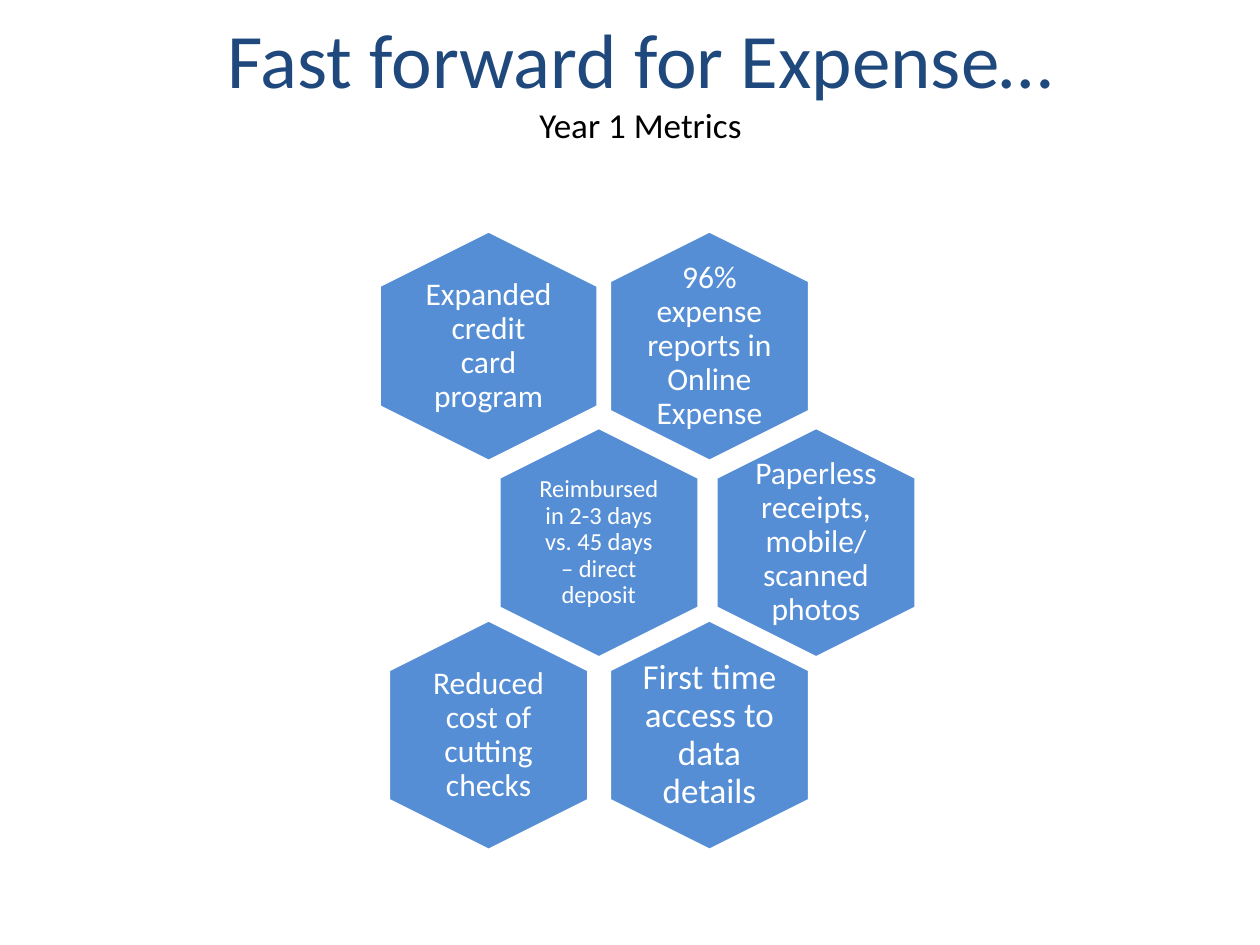
"""Build the expense metrics slide with its honeycomb of hexagons."""
import pptx
import pptx.dml.color
import pptx.enum.shapes
import pptx.enum.text
import pptx.util

Pt = pptx.util.Pt
NAVY = pptx.dml.color.RGBColor(0x1F, 0x49, 0x7D)
BLUE = pptx.dml.color.RGBColor(0x55, 0x8E, 0xD5)
WHITE = pptx.dml.color.RGBColor(0xFF, 0xFF, 0xFF)
BLACK = pptx.dml.color.RGBColor(0x00, 0x00, 0x00)
CENTER = pptx.enum.text.PP_ALIGN.CENTER
MIDDLE = pptx.enum.text.MSO_ANCHOR.MIDDLE
NO_FIT = pptx.enum.text.MSO_AUTO_SIZE.NONE


def format_run(r, size, color):
    r.font.name = "Calibri"
    r.font.size = Pt(size)
    r.font.color.rgb = color


prs = pptx.Presentation()
prs.slide_width, prs.slide_height = Pt(720), Pt(540)
s = prs.slides.add_slide(prs.slide_layouts[5])

title = s.shapes.title
title.left, title.top, title.width, title.height = Pt(42), Pt(0), Pt(648), Pt(90)
tf = title.text_frame
tf.auto_size = NO_FIT
tf.vertical_anchor = MIDDLE
p = tf.paragraphs[0]
p.text = "Fast forward for Expense…\vYear 1 Metrics"
p.alignment = CENTER
format_run(p.runs[0], 44, NAVY)
format_run(p.runs[1], 20, BLACK)

HEX_LENGTH = 131.8
TEXT_HEIGHT = 90.5
ROWS = [197.8, 310.1, 420.1]
cells = [
    (279.2, 0, 125.3, 84.2, 5, 18, "Expanded credit card program"),
    (405.4, 0, 114.5, 79.2, 0, 18, "96% expense reports in Online Expense"),
    (342.2, 1, 114.5, 79.2, 4.3, 14, "Reimbursed in 2-3 days vs. 45 days – direct deposit"),
    (466.3, 1, 114.5, 79.2, 0, 18, "Paperless receipts, mobile/ scanned photos"),
    (279.2, 2, 114.5, 79.2, 5, 18, "Reduced cost of cutting checks"),
    (405.4, 2, 114.5, 79.2, 0, 20, "First time access to data details"),
]

for x, row, hex_width, text_width, inset, size, text in cells:
    y = ROWS[row]
    sp = s.shapes.add_shape(
        pptx.enum.shapes.MSO_SHAPE.HEXAGON,
        Pt(x - HEX_LENGTH / 2), Pt(y - hex_width / 2), Pt(HEX_LENGTH), Pt(hex_width))
    sp.rotation = 90
    sp.adjustments[0] = 0.25
    sp.shadow.inherit = False
    sp.fill.solid()
    sp.fill.fore_color.rgb = BLUE
    sp.line.color.rgb = WHITE
    sp.line.width = Pt(2)

    box = s.shapes.add_textbox(
        Pt(x - text_width / 2), Pt(y - TEXT_HEIGHT / 2), Pt(text_width), Pt(TEXT_HEIGHT))
    tf = box.text_frame
    tf.word_wrap = True
    tf.auto_size = NO_FIT
    tf.vertical_anchor = MIDDLE
    tf.margin_left = tf.margin_right = tf.margin_top = tf.margin_bottom = Pt(inset)
    p = tf.paragraphs[0]
    p.text = text
    p.alignment = CENTER
    p.line_spacing = 0.9
    format_run(p.runs[0], size, WHITE)

prs.save("out.pptx")
